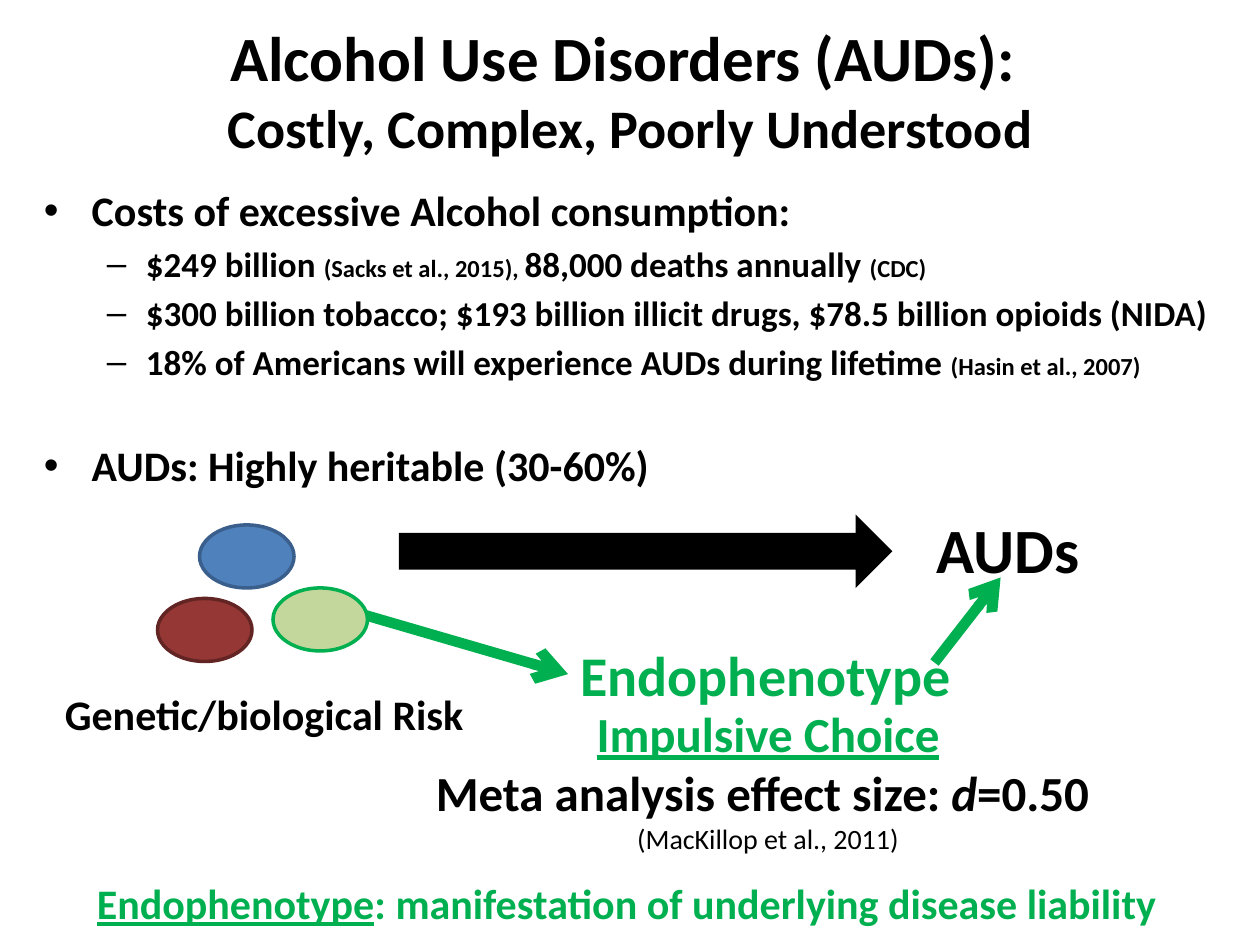
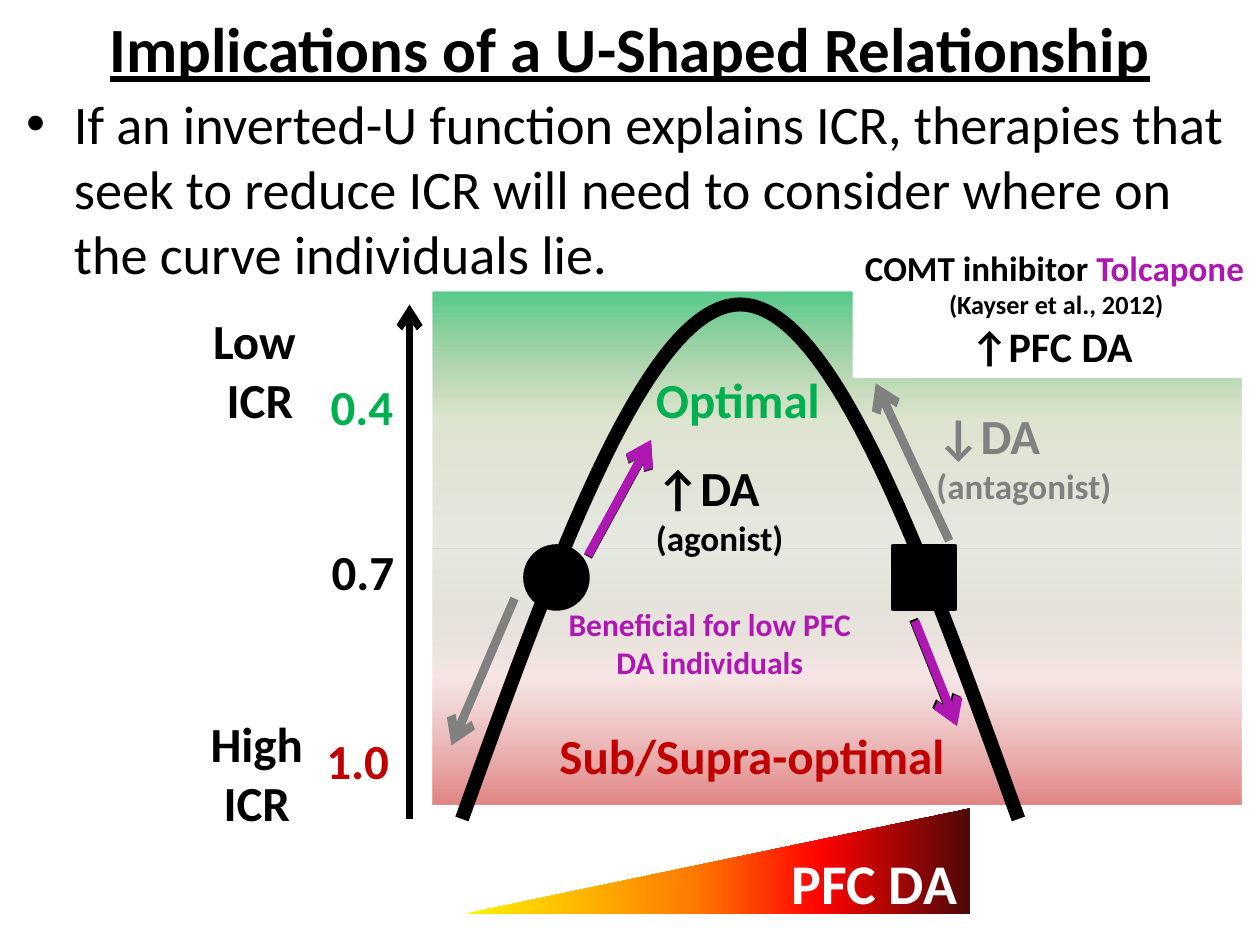
from dataclasses import dataclass

import pptx
import pptx.dml.color
import pptx.enum.shapes
import pptx.enum.text
import pptx.oxml.ns
import pptx.util
from lxml import etree

COLUMNS, ROWS = 120, 90
CELL = pptx.util.Inches(10) // COLUMNS
FONT = "Calibri"
BLACK, WHITE, GRAY = "000000", "FFFFFF", "808080"
GREEN, RED, PURPLE = "00B050", "C00000", "AF17B3"
SHAPES = pptx.enum.shapes.MSO_SHAPE
ALIGNMENTS = {
    "left": pptx.enum.text.PP_ALIGN.LEFT,
    "center": pptx.enum.text.PP_ALIGN.CENTER,
}
qn = pptx.oxml.ns.qn


@dataclass
class Box:
    """A rectangle in grid cells."""
    left: float
    top: float
    width: float
    height: float

    def inside(self, left, top, width, height):
        return Box(self.left + left, self.top + top, width, height)

    def point(self, column, row):
        return round((self.left + column) * CELL), round((self.top + row) * CELL)

    def frame(self):
        return *self.point(0, 0), round(self.width * CELL), round(self.height * CELL)


def color(value):
    return pptx.dml.color.RGBColor.from_string(value)


def line(*runs, **options):
    """One paragraph: runs are strings or (string, format) pairs."""
    return runs, options


def add_bullet(paragraph, symbol, margin, hanging):
    properties = paragraph._p.get_or_add_pPr()
    properties.set("marL", str(pptx.util.Inches(margin)))
    properties.set("indent", str(-pptx.util.Inches(hanging)))
    etree.SubElement(properties, qn("a:buFont"), typeface="Arial")
    etree.SubElement(properties, qn("a:buChar"), char=symbol)


def fill_text(text_frame, lines, wrap=False, middle=False, **defaults):
    """Write lines, given as strings or line() results, with shared defaults."""
    anchors = pptx.enum.text.MSO_ANCHOR
    text_frame.word_wrap = wrap
    text_frame.vertical_anchor = anchors.MIDDLE if middle else anchors.TOP
    for index, entry in enumerate(lines):
        runs, options = line(entry) if isinstance(entry, str) else entry
        options = {**defaults, **options}
        paragraph = text_frame.add_paragraph() if index else text_frame.paragraphs[0]
        paragraph.alignment = ALIGNMENTS[options.get("align", "left")]
        if "bullet" in options:
            add_bullet(paragraph, *options["bullet"])
        if index and "before" in options:
            paragraph.space_before = pptx.util.Pt(options["before"])
        for run_entry in runs:
            text, changes = (run_entry, {}) if isinstance(run_entry, str) else run_entry
            look = {**options, **changes}
            run = paragraph.add_run()
            run.text = text
            run.font.name = FONT
            run.font.size = pptx.util.Pt(look["size"])
            run.font.bold = look.get("bold", True)
            run.font.italic = look.get("italic", False)
            run.font.underline = look.get("underline", False)
            run.font.color.rgb = color(look.get("color", BLACK))


def write(slide, box, *lines, **options):
    fill_text(slide.shapes.add_textbox(*box.frame()).text_frame, lines, **options)


def add_title(slide, box, *lines, **options):
    write(slide, box, *lines, size=36, align="center", wrap=True, middle=True, **options)


def set_outline(outlined, outline, width):
    if outline:
        outlined.line.color.rgb = color(outline)
        outlined.line.width = pptx.util.Pt(width)
    else:
        outlined.line.fill.background()


def add_shape(slide, kind, box, fill=None, outline=None, width=2):
    shape = slide.shapes.add_shape(kind, *box.frame())
    shape.shadow.inherit = False
    if fill:
        shape.fill.solid()
        shape.fill.fore_color.rgb = color(fill)
    set_outline(shape, outline, width)
    return shape


def fill_gradient(shape, *stops):
    """Fill downwards with stops of (position, colour, opacity), in percent."""
    shape.fill.gradient()
    shape.fill.gradient_angle = 270
    stop_list = shape._element.spPr.find(qn("a:gradFill")).find(qn("a:gsLst"))
    for old_stop in list(stop_list):
        stop_list.remove(old_stop)
    for position, value, opacity in stops:
        stop = etree.SubElement(stop_list, qn("a:gs"), pos=str(position * 1000))
        stop_color = etree.SubElement(stop, qn("a:srgbClr"), val=value)
        etree.SubElement(stop_color, qn("a:alpha"), val=str(opacity * 1000))


def add_arrow(slide, box, start, end, value, width):
    connector = slide.shapes.add_connector(
        pptx.enum.shapes.MSO_CONNECTOR.STRAIGHT, *box.point(*start), *box.point(*end))
    set_outline(connector, value, width)
    etree.SubElement(connector.line._get_or_add_ln(), qn("a:tailEnd"), type="arrow")
    etree.SubElement(connector._element.spPr, qn("a:effectLst"))


def add_cost_bullets(slide, box):
    topic = {"size": 24, "bullet": ("•", 0.38, 0.38)}
    detail = {"size": 20, "bullet": ("–", 0.81, 0.31), "before": 4}
    small = {"size": 14}
    write(
        slide, box,
        line("Costs of excessive Alcohol consumption:", **topic),
        line("$249 billion ", ("(Sacks et al., 2015), ", small),
             "88,000 deaths annually ", ("(CDC)", small), **detail),
        line("$300 billion tobacco; $193 billion illicit drugs, "
             "$78.5 billion opioids (NIDA)", **detail),
        line("18% of Americans will experience AUDs during lifetime ",
             ("(Hasin et al., 2007)", small), **detail),
        line("AUDs: Highly heritable (30-60%)", before=33, **topic),
        wrap=True)


def add_risk_pathway(slide, box):
    add_arrow(slide, box, (33.8, 10.3), (54.1, 16.2), GREEN, 6)
    for left, top, fill, outline in (
            (19, 2, "4F81BD", "3A5F8C"),
            (15, 9, "953735", "632523"),
            (26, 8, "C3D69B", GREEN)):
        add_shape(slide, SHAPES.OVAL, box.inside(left, top, 9, 6), fill, outline)
    write(slide, box.inside(5, 17, 40.8, 6), "Genetic/biological Risk", size=24)
    add_shape(slide, SHAPES.RIGHT_ARROW, box.inside(38, 1, 47, 7), BLACK)
    write(slide, box.inside(88, 0, 16.2, 8.5), "AUDs", size=36)
    write(slide, box.inside(54.1, 12.4, 38, 7.7), "Endophenotype", size=32, color=GREEN)
    add_arrow(slide, box, (89, 15.1), (95.3, 7), GREEN, 6)
    write(
        slide, box.inside(39.8, 18.4, 66.7, 15.7),
        line("Impulsive Choice", color=GREEN, underline=True),
        line("Meta analysis effect size: ", ("d", {"italic": True}), "=0.50 "),
        line("(MacKillop et al., 2011)", size=16, bold=False),
        size=28, align="center")


def build_disorders_slide(slide):
    add_title(slide, Box(3, 1, 114, 15), "Alcohol Use Disorders (AUDs): ",
              line("Costly, Complex, Poorly Understood", size=31))
    add_cost_bullets(slide, Box(3, 17, 114, 30))
    add_risk_pathway(slide, Box(0, 48, COLUMNS, 34))
    write(slide, Box(5, 83, 109.4, 6),
          line(("Endophenotype", {"underline": True}),
               ": manifestation of underlying disease liability"),
          size=24, color=GREEN, align="center", wrap=True)


def add_performance_bands(slide, box):
    half = box.height / 2
    base = (100, "4F6228", 13)
    upper = add_shape(slide, SHAPES.RECTANGLE, box.inside(0, 0, box.width, half))
    fill_gradient(upper, (0, GREEN, 66), (50, "77933C", 24), base)
    lower = add_shape(slide, SHAPES.RECTANGLE, box.inside(0, half, box.width, half))
    lower.rotation = 180
    fill_gradient(lower, (0, RED, 48), (50, "E6B9B8", 36), base)


def add_inverted_u(slide, box, steps=40):
    points = []
    for step in range(-steps, steps + 1):
        offset = abs(step) / steps
        drop = 1.5 * offset ** 2 - 0.5 * offset ** 3
        points.append(box.point(box.width * (1 + step / steps) / 2, box.height * drop))
    builder = slide.shapes.build_freeform(*points[0])
    builder.add_line_segments(points[1:], close=False)
    curve = builder.convert_to_shape()
    curve.shadow.inherit = False
    curve.fill.background()
    set_outline(curve, BLACK, 8)


def add_dopamine_wedge(slide, box):
    """Draw the triangle upright and turn it about the centre of the box."""
    shift = (box.width - box.height) / 2
    upright = box.inside(shift, -shift, box.height, box.width)
    wedge = add_shape(slide, SHAPES.RIGHT_TRIANGLE, upright)
    wedge.rotation = 270
    fill_gradient(wedge, (0, "FFF200", 100), (45, "FF7A00", 100),
                  (70, "FF0300", 100), (100, "4D0808", 100))
    write(slide, box.inside(29.8, 3.2, 18.4, 7.7), "PFC DA", size=32, color=WHITE)


def add_ratio_axis(slide, box):
    add_arrow(slide, box, (box.width, box.height), (box.width, 0), BLACK, 4.25)
    for left, top, label, value in (
            (11.9, 6.3, "0.4", GREEN), (12, 22, "0.7", BLACK), (11.5, 40, "1.0", RED)):
        write(slide, box.inside(left, top, 8.5, 6.8), label, size=28, color=value)
    for left, top, word in ((0.3, 0, "Low "), (0, 38.4, "High ")):
        write(slide, box.inside(left, top, 12.1, 12.5), word, "ICR",
              size=28, align="center", wrap=True)


def add_drug_effects(slide, box):
    """Mark both starting points and the arrows that lead away from them."""
    add_shape(slide, SHAPES.OVAL, box.inside(8.8, 24.2, 6, 6), BLACK, BLACK)
    add_shape(slide, SHAPES.RECTANGLE, box.inside(43.8, 24.2, 6, 6), BLACK, BLACK)
    for start, end in (((49.2, 23.7), (42.2, 8.7)), ((7.8, 29.2), (1.8, 43.2))):
        add_arrow(slide, box, start, end, GRAY, 5)
    for value, rise, fall in ((BLACK, 0, 0), (PURPLE, -0.1, 0.15)):
        add_arrow(slide, box, (14.8, 25.2 + rise), (20.8, 14.2 + rise), value, 5)
        add_arrow(slide, box, (45.8 + fall, 31.2 + fall),
                  (49.8 + fall, 41.2 + fall), value, 5)
    for left, top, width, change, drug, value in (
            (20.1, 15.2, 14.6, "↑DA", "(agonist)", BLACK),
            (46.8, 10.2, 19.2, "↓DA", "(antagonist)", GRAY)):
        write(slide, box.inside(left, top, width, 10.9), change, line(drug, size=20),
              size=28, color=value)
    write(slide, box.inside(11.4, 29.2, 30, 8.5), "Beneficial for low PFC DA individuals",
          size=18, color=PURPLE, align="center", wrap=True)
    write(slide, box.inside(20.1, 6.8, 18.2, 6.8), "Optimal", size=28, color=GREEN)
    write(slide, box.inside(10.9, 40.7, 39.5, 6.8), "Sub/Supra-optimal", size=28, color=RED)


def add_inhibitor_note(slide, box):
    note = add_shape(slide, SHAPES.RECTANGLE, box, WHITE)
    fill_text(note.text_frame, [
        line("COMT inhibitor ", ("Tolcapone", {"color": PURPLE}), size=20, align="left"),
        line("(Kayser et al., 2012)", size=15),
        line("↑PFC DA ", size=24)], align="center")


def build_implications_slide(slide):
    plot = Box(41.2, 27.8, 77, 48.8)
    add_performance_bands(slide, plot)
    add_title(slide, Box(0, -3, COLUMNS, 15),
              "Implications of a U-Shaped Relationship", underline=True)
    write(slide, Box(1.3, 8, 117.2, 20),
          "If an inverted-U function explains ICR, therapies that seek to reduce ICR "
          "will need to consider where on the curve individuals lie.",
          size=31, bold=False, bullet=("•", 0.38, 0.38), wrap=True)
    add_inverted_u(slide, Box(44, 29, 53, 49))
    add_dopamine_wedge(slide, Box(44.4, 77, 48, 10))
    add_ratio_axis(slide, Box(18.4, 29, 20.6, 49))
    add_drug_effects(slide, plot)
    add_inhibitor_note(slide, Box(81.2, 22.9, 38.8, 13.1))


def main():
    presentation = pptx.Presentation()
    presentation.slide_width = COLUMNS * CELL
    presentation.slide_height = ROWS * CELL
    for build in (build_disorders_slide, build_implications_slide):
        build(presentation.slides.add_slide(presentation.slide_layouts[6]))
    presentation.save("out.pptx")


if __name__ == "__main__":
    main()
